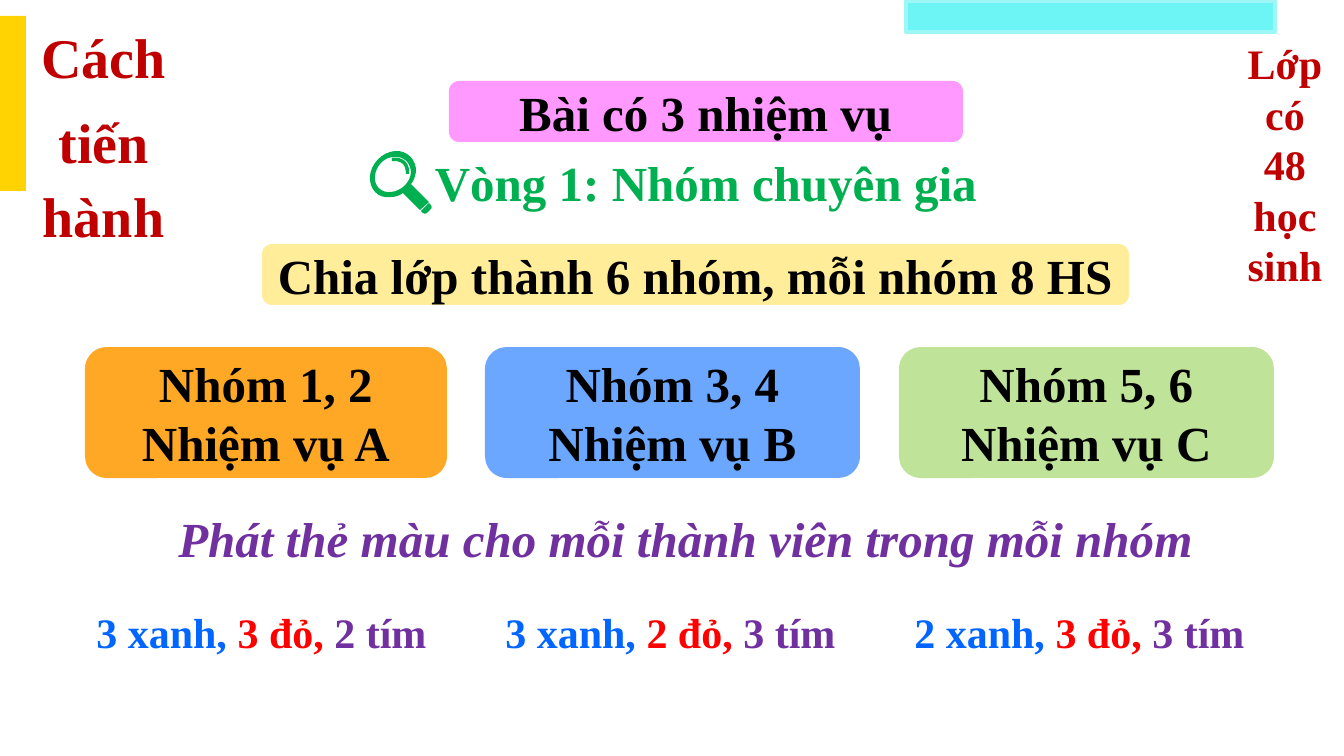
import pptx
import pptx.dml.color
import pptx.enum.shapes
import pptx.enum.text
import pptx.oxml
import pptx.oxml.ns
import pptx.util

PX = 914400 / 100.8
FONT = "Times New Roman"
COLORS = {
    "black": "000000", "dark_red": "C00000", "red": "FF0000", "blue": "0066FF",
    "purple": "7030A0", "green": "00B050", "yellow": "FFD302", "cyan": "6DF4F4",
    "pale_cyan": "9EF7F7", "pink": "FF99FF", "cream": "FFED9A",
    "orange": "FF9900", "lime": "92D050",
}
RECTANGLE = pptx.enum.shapes.MSO_SHAPE.RECTANGLE
ROUNDED = pptx.enum.shapes.MSO_SHAPE.ROUNDED_RECTANGLE

# Each contour is a start point and segments: one point is a line, three a curve.
MAGNIFIER = [
    [[(60, 53)], [(62, 55)], [(63, 56), (63, 58), (62, 59)], [(58, 63)],
     [(57, 64), (55, 64), (54, 63)], [(53, 62), (53, 62), (52, 61)]],
    [[(23, 8)], [(28, 7), (32, 8), (36, 11)], [(39, 14), (41, 19), (40, 24)],
     [(37, 24)], [(37, 20), (36, 16), (34, 14)], [(31, 11), (27, 11), (23, 11)]],
    [[(25, 7)], [(15, 7), (7, 16), (6, 26)], [(5, 36), (12, 43), (22, 42)],
     [(32, 41), (41, 33), (42, 23)], [(42, 13), (35, 6), (25, 7)]],
    [[(26, 1)], [(38, 0), (48, 10), (47, 22)], [(46, 27), (45, 31), (42, 34)],
     [(60, 52)], [(51, 60)], [(34, 43)], [(30, 46), (26, 47), (22, 47)],
     [(9, 49), (0, 39), (1, 26)], [(2, 14), (13, 2), (26, 1)]],
]


def px(length):
    return pptx.util.Emu(round(length * PX))


def rgb(name):
    return pptx.dml.color.RGBColor.from_string(COLORS[name])


def paint(shape, fill=None, opacity=100, line=None):
    shape.shadow.inherit = False
    if fill:
        shape.fill.solid()
        shape.fill.fore_color.rgb = rgb(fill)
    else:
        shape.fill.background()
    if opacity < 100:
        color = shape._element.spPr.find(".//" + pptx.oxml.ns.qn("a:srgbClr"))
        color.append(pptx.oxml.parse_xml(
            f'<a:alpha {pptx.oxml.ns.nsdecls("a")} val="{opacity * 1000}"/>'))
    if line:
        shape.line.color.rgb = rgb(line)
        shape.line.width = pptx.util.Pt(3)
    else:
        shape.line.fill.background()


def add_box(slide, box, fill=None, kind=ROUNDED, **style):
    shape = slide.shapes.add_shape(kind, *map(px, box))
    paint(shape, fill, **style)
    return shape


def write(shape, paragraphs, size=35, color="black", italic=False,
          line_spacing=None, space_before=None):
    """Fill a shape with paragraphs: strings, or lists of (text, colour) runs."""
    frame = shape.text_frame
    frame.word_wrap = True
    frame.vertical_anchor = pptx.enum.text.MSO_ANCHOR.MIDDLE
    for index, content in enumerate(paragraphs):
        paragraph = frame.add_paragraph() if index else frame.paragraphs[0]
        paragraph.alignment = pptx.enum.text.PP_ALIGN.CENTER
        if line_spacing:
            paragraph.line_spacing = line_spacing
        if space_before:
            paragraph.space_before = pptx.util.Pt(space_before)
        runs = [(content, color)] if isinstance(content, str) else content
        for text, run_color in runs:
            run = paragraph.add_run()
            run.text = text
            run.font.name = FONT
            run.font.size = pptx.util.Pt(size)
            run.font.bold = True
            run.font.italic = italic
            run.font.color.rgb = rgb(run_color)


def add_text(slide, box, paragraphs, **style):
    write(slide.shapes.add_textbox(*map(px, box)), paragraphs, **style)


def bend(shape, contours):
    """Turn each run of three lines that stands for a curve into one curve."""
    lines = iter(shape._element.findall(".//" + pptx.oxml.ns.qn("a:lnTo")))
    for contour in contours:
        for segment in contour[1:]:
            pieces = [next(lines) for _ in segment]
            if len(pieces) == 3:
                curve = pptx.oxml.parse_xml(
                    f'<a:cubicBezTo {pptx.oxml.ns.nsdecls("a")}/>')
                pieces[0].addprevious(curve)
                for piece in pieces:
                    curve.append(piece[0])
                    piece.getparent().remove(piece)


def add_magnifier(slide, left, top):
    builder = None
    for contour in MAGNIFIER:
        start, *points = [(left + x, top + y)
                          for segment in contour for x, y in segment]
        if builder:
            builder.move_to(*start)
        else:
            builder = slide.shapes.build_freeform(*start, scale=PX)
        builder.add_line_segments(points, close=True)
    shape = builder.convert_to_shape()
    bend(shape, MAGNIFIER)
    paint(shape, "green")


def add_margins(slide):
    add_text(slide, (26, 28, 155, 209), ["Cách", "tiến hành"], size=40,
             color="dark_red", line_spacing=1.1, space_before=8)
    add_box(slide, (-11, 16, 37, 175), "yellow", RECTANGLE)
    add_box(slide, (906, 1, 369, 31), "cyan", RECTANGLE, line="pale_cyan")
    add_text(slide, (1232, 32, 106, 264), ["Lớp có 48 học sinh"],
             size=30, color="dark_red")


def add_headings(slide, top):
    write(add_box(slide, (449, top, 514, 61), "pink"), ["Bài có 3 nhiệm vụ"])
    add_magnifier(slide, 369, top + 69)
    write(add_box(slide, (416, top + 70, 580, 61)),
          ["Vòng 1: Nhóm chuyên gia"], color="green")
    write(add_box(slide, (262, top + 163, 867, 61), "cream"),
          ["Chia lớp thành 6 nhóm, mỗi nhóm 8 HS"])


def add_groups(slide, top):
    groups = [
        (85, 362, "orange", 85, "Nhóm 1, 2", "Nhiệm vụ A"),
        (485, 375, "blue", 58, "Nhóm 3, 4", "Nhiệm vụ B"),
        (899, 375, "lime", 58, "Nhóm 5, 6", "Nhiệm vụ C"),
    ]
    for left, width, fill, opacity, *lines in groups:
        card = add_box(slide, (left, top, width, 131), fill, opacity=opacity)
        write(card, lines)


def add_color_cards(slide, top):
    write(add_box(slide, (139, top, 1094, 61)),
          ["Phát thẻ màu cho mỗi thành viên trong mỗi nhóm"],
          color="purple", italic=True)
    for column, (blue, red, purple) in enumerate([(3, 3, 2), (3, 2, 3), (2, 3, 3)]):
        runs = [(f"{blue} xanh, ", "blue"), (f"{red} đỏ, ", "red"),
                (f"{purple} tím", "purple")]
        write(add_box(slide, (38 + 409 * column, top + 94, 447, 61)), [runs], size=30)


def main():
    presentation = pptx.Presentation()
    presentation.slide_width = px(1344)
    presentation.slide_height = px(756)
    slide = presentation.slides.add_slide(presentation.slide_layouts[6])
    add_margins(slide)
    add_headings(slide, top=81)
    add_groups(slide, top=347)
    add_color_cards(slide, top=507)
    presentation.save("out.pptx")


if __name__ == "__main__":
    main()
